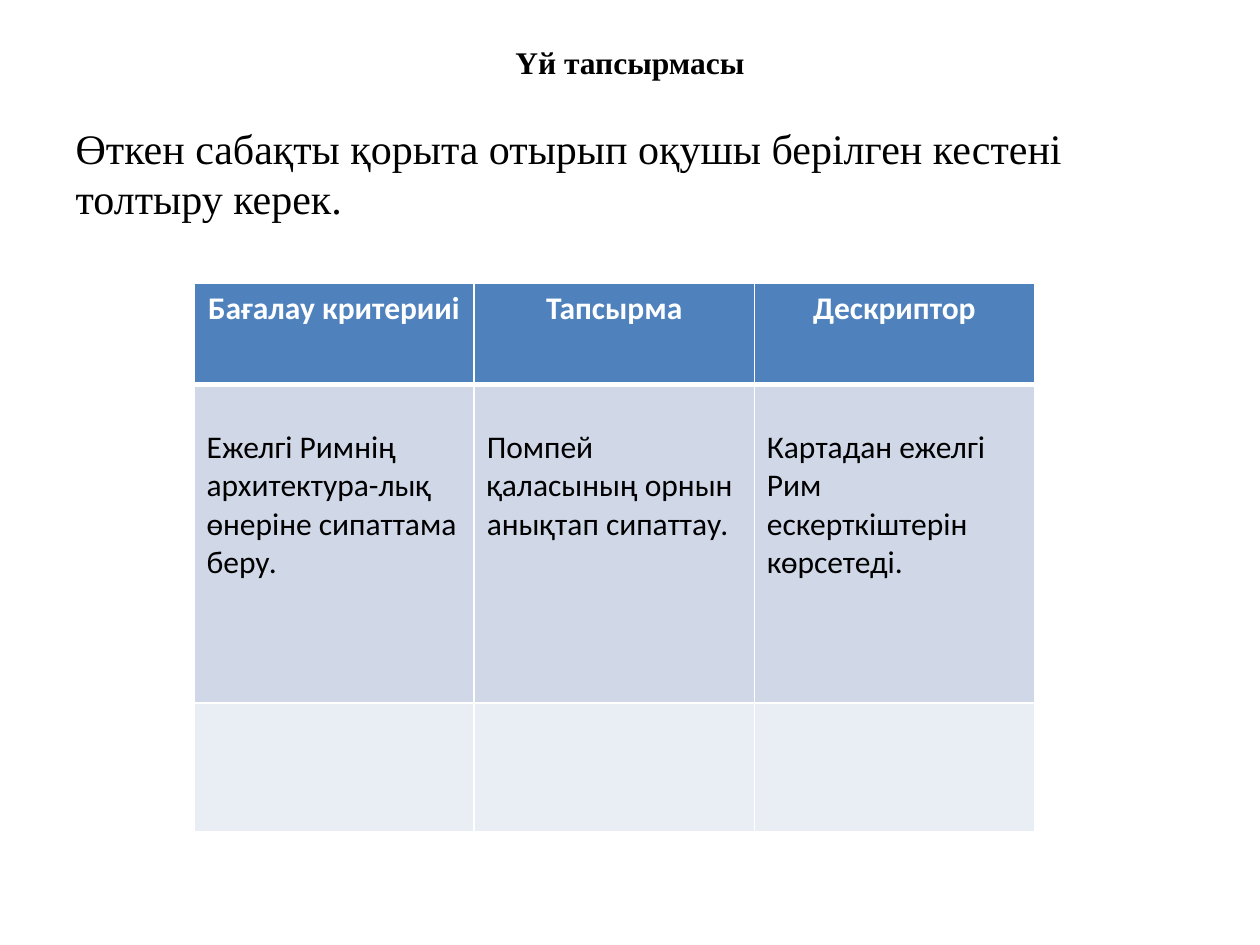
import pptx
import pptx.dml.color
import pptx.enum.text
import pptx.oxml.ns
import pptx.util
from lxml import etree

Inches = pptx.util.Inches
Pt = pptx.util.Pt
qn = pptx.oxml.ns.qn
PP_ALIGN = pptx.enum.text.PP_ALIGN
ANCHOR = pptx.enum.text.MSO_ANCHOR

HEADERS = ["Бағалау критерииі", "Тапсырма", "Дескриптор"]
CONTENT = [
    "Ежелгі Римнің архитектура-лық өнеріне сипаттама беру.",
    "Помпей қаласының орнын анықтап сипаттау.",
    "Картадан ежелгі Рим ескерткіштерін көрсетеді.",
]
ROW_HEIGHTS = [0.8, 2.53, 1.02]
ROW_FILLS = ["4F81BD", "D0D8E8", "E9EDF4"]


def rgb(value):
    return pptx.dml.color.RGBColor.from_string(value)


def place(shape, left, top, width, height):
    shape.left, shape.top = Inches(left), Inches(top)
    shape.width, shape.height = Inches(width), Inches(height)


def format_text(p, font, size, color, bold=False, align=PP_ALIGN.LEFT):
    p.alignment = align
    for r in p.runs:
        r.font.name = font
        r.font.size = Pt(size)
        r.font.bold = bold
        r.font.color.rgb = rgb(color)


def set_borders(cell, bottom=1):
    """Draw white borders, with the bottom width in points."""
    tcPr = cell._tc.get_or_add_tcPr()
    widths = {"a:lnL": 1, "a:lnR": 1, "a:lnT": 1, "a:lnB": bottom}
    for i, (tag, width) in enumerate(widths.items()):
        ln = etree.Element(qn(tag), w=str(Pt(width)))
        fill = etree.SubElement(ln, qn("a:solidFill"))
        etree.SubElement(fill, qn("a:srgbClr"), val="FFFFFF")
        tcPr.insert(i, ln)


def add_title(s, left, top, width, height):
    sp = s.shapes.title
    place(sp, left, top, width, height)
    tf = sp.text_frame
    tf.text = "Үй тапсырмасы"
    tf.vertical_anchor = ANCHOR.MIDDLE
    tf.auto_size = pptx.enum.text.MSO_AUTO_SIZE.NONE
    format_text(tf.paragraphs[0], "Times New Roman", 18, "000000", True, PP_ALIGN.CENTER)


def add_body(s, left, top, width, height):
    sp = s.placeholders[1]
    place(sp, left, top, width, height)
    tf = sp.text_frame
    tf.text = "Өткен сабақты қорыта отырып оқушы берілген кестені толтыру керек."
    tf.auto_size = pptx.enum.text.MSO_AUTO_SIZE.NONE
    p = tf.paragraphs[0]
    format_text(p, "Times New Roman", 24, "000000")
    pPr = p._p.get_or_add_pPr()
    pPr.set("marL", "0")
    pPr.set("indent", "0")
    etree.SubElement(pPr, qn("a:buNone"))


def add_criteria_table(s, left, top, width):
    rows = [HEADERS, CONTENT, [""] * len(HEADERS)]
    table = s.shapes.add_table(
        len(rows), len(HEADERS), Inches(left), Inches(top),
        Inches(width), Inches(sum(ROW_HEIGHTS))).table
    for i, texts in enumerate(rows):
        table.rows[i].height = Inches(ROW_HEIGHTS[i])
        is_header = i == 0
        for j, text in enumerate(texts):
            cell = table.cell(i, j)
            cell.fill.solid()
            cell.fill.fore_color.rgb = rgb(ROW_FILLS[i])
            set_borders(cell, bottom=3 if is_header else 1)
            if not text:
                continue
            cell.text_frame.text = text
            p = cell.text_frame.paragraphs[0]
            if is_header:
                format_text(p, "Calibri", 18, "FFFFFF", True, PP_ALIGN.CENTER)
            else:
                cell.margin_top = Inches(0.35)
                format_text(p, "Calibri", 18, "000000")


def main():
    prs = pptx.Presentation()
    prs.slide_width, prs.slide_height = Inches(10), Inches(7.5)
    s = prs.slides.add_slide(prs.slide_layouts[1])
    add_title(s, 0.5, 0.3, 9, 0.38)
    add_body(s, 0.5, 0.92, 9, 6.06)
    add_criteria_table(s, 1.54, 2.25, 6.67)
    prs.save("out.pptx")


if __name__ == "__main__":
    main()
